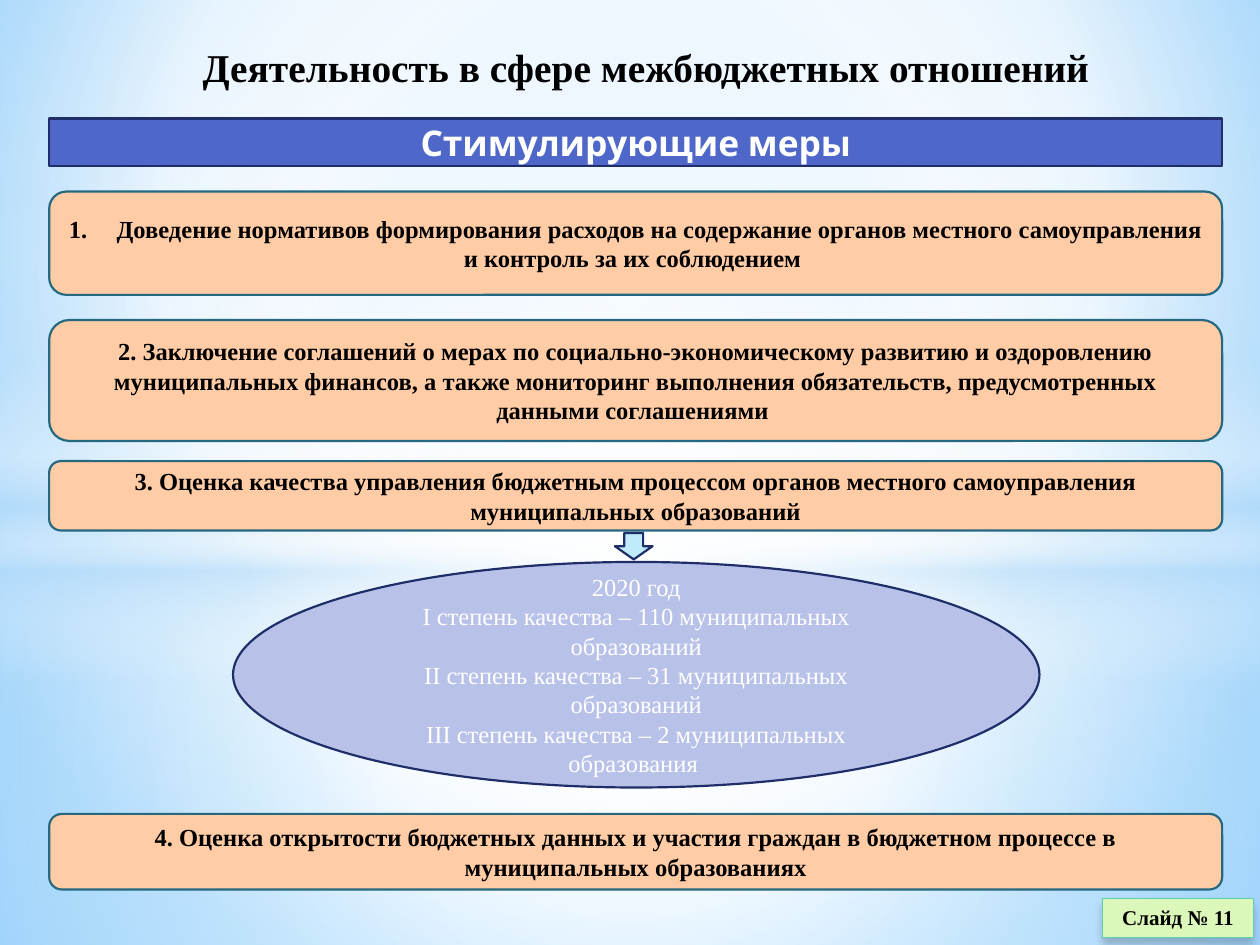
from lxml.etree import SubElement
from pptx import Presentation
from pptx.dml.color import RGBColor
from pptx.enum.shapes import MSO_SHAPE as Kind
from pptx.enum.text import MSO_ANCHOR, PP_ALIGN
from pptx.oxml import parse_xml
from pptx.oxml.ns import qn, nsdecls
from pptx.util import Inches, Pt

deck = Presentation()
deck.slide_width, deck.slide_height = Inches(10), Inches(7.5)
slide = deck.slides.add_slide(deck.slide_layouts[6])


def blend(host, stops, tail):
    marks = "".join(
        f'<a:gs pos="{pos * 1000}"><a:srgbClr val="{tone}">'
        f'<a:alpha val="{alpha * 1000}"/></a:srgbClr></a:gs>'
        for pos, tone, alpha in stops)
    fill = parse_xml(f'<a:gradFill {nsdecls("a")} rotWithShape="1">'
                     f'<a:gsLst>{marks}</a:gsLst>{tail}</a:gradFill>')
    old = host.find(qn("a:solidFill"))
    host.replace(old, fill)


def write(shape, lines, size, tone="000000", bold=True, font="Times New Roman"):
    frame = shape.text_frame
    frame.word_wrap = True
    for i, line in enumerate(lines):
        para = frame.paragraphs[0] if i == 0 else frame.add_paragraph()
        para.alignment = PP_ALIGN.CENTER
        run = para.add_run()
        run.text = line
        run.font.name = font
        run.font.size = Pt(size)
        run.font.bold = bold
        run.font.color.rgb = RGBColor.from_string(tone)


ring = ('<a:path path="circle"><a:fillToRect l="{}000" t="{}000" '
        'r="{}000" b="{}000"/></a:path>')
mid = ring.format(50, 50, 50, 50)
white, sky = "FFFFFF", "B4DCFA"

slide.background.fill.solid()
blend(next(slide.element.iter(qn("p:bgPr"))),
      [(0, "9ED5FF", 100), (60, white, 100), (100, "5BB9FF", 100)],
      ring.format(20, 10, 20, 60))

glows = [
    (Kind.RECTANGLE, 4.23, 3.27, [(0, white, 91), (37, white, 76), (100, sky, 79)], mid),
    (Kind.RECTANGLE, 0, 4.23, [(0, white, 89), (48, white, 62), (100, sky, 79)], mid),
    (Kind.RECTANGLE, 2.9, 2.5,
     [(0, white, 1), (29, white, 30), (45, sky, 40), (55, white, 26),
      (65, sky, 60), (100, white, 1)], '<a:lin ang="5400000" scaled="0"/>'),
    (Kind.OVAL, 1.75, 5.58, [(0, white, 100), (54, white, 1)], mid),
]
for kind, top, high, stops, tail in glows:
    glow = slide.shapes.add_shape(kind, 0, Inches(top), Inches(10), Inches(high))
    glow.shadow.inherit = False
    glow.line.fill.background()
    glow.fill.solid()
    blend(glow.element.spPr, stops, tail)

title = slide.shapes.add_textbox(Inches(0.61), Inches(0.29), Inches(8.84), Inches(0.58))
write(title, ["Деятельность в сфере межбюджетных отношений"], 22.5)
title.text_frame.paragraphs[0]._p.get_or_add_pPr().set("marL", str(Inches(0.2)))

peach, teal, navy = "FFCCA6", "256880", "1F2E69"
items = [
    ("head", Kind.RECTANGLE, (0.39, 0.94, 9.31, 0.38), "4E67C8", navy,
     ["Стимулирующие меры"], (20.2, white, True, "Karla")),
    ("first", Kind.ROUNDED_RECTANGLE, (0.39, 1.52, 9.31, 0.82), peach, teal,
     ["Доведение нормативов формирования расходов на содержание органов местного самоуправления ",
      "и контроль за их соблюдением "], (14,)),
    ("third", Kind.ROUNDED_RECTANGLE, (0.39, 3.66, 9.31, 0.55), peach, teal,
     ["3. Оценка качества управления бюджетным процессом органов местного самоуправления "
      "муниципальных образований"], (14,)),
    ("fourth", Kind.ROUNDED_RECTANGLE, (0.39, 6.46, 9.31, 0.6), peach, teal,
     ["4. Оценка открытости бюджетных данных и участия граждан в бюджетном процессе в "
      "муниципальных образованиях"], (14,)),
    ("second", Kind.ROUNDED_RECTANGLE, (0.39, 2.54, 9.31, 0.96), peach, teal,
     ["2. Заключение соглашений о мерах по социально-экономическому развитию и оздоровлению "
      "муниципальных финансов, а также мониторинг выполнения обязательств, предусмотренных "
      "данными соглашениями "], (14,)),
    ("grades", Kind.OVAL, (1.85, 4.46, 6.4, 1.79), "B8C2E9", navy,
     ["2020 год", "I степень качества – 110 муниципальных образований",
      "II степень качества – 31 муниципальных образований",
      "III степень качества – 2 муниципальных образования "], (14, white, False)),
    ("arrow", Kind.DOWN_ARROW, (4.88, 4.23, 0.3, 0.21), "BFEBFA", navy, [], (14,)),
    ("number", Kind.RECTANGLE, (8.75, 7.13, 1.2, 0.31), "DCF7BA", "5DCEAF",
     ["Слайд № 11"], (12,)),
]
parts = {}
for name, kind, box, fill, edge, lines, style in items:
    shape = slide.shapes.add_shape(kind, *map(Inches, box))
    shape.shadow.inherit = False
    shape.fill.solid()
    shape.fill.fore_color.rgb = RGBColor.from_string(fill)
    shape.line.color.rgb = RGBColor.from_string(edge)
    shape.line.width = Pt(1.25)
    shape.text_frame.vertical_anchor = MSO_ANCHOR.MIDDLE
    write(shape, lines, *style)
    parts[name] = shape

props = parts["first"].text_frame.paragraphs[0]._p.get_or_add_pPr()
props.set("marL", str(Inches(0.38)))
props.set("indent", str(-Inches(0.38)))
SubElement(props, qn("a:buAutoNum"), type="arabicPeriod")

badge = parts["number"]
badge.line.width = Pt(0.75)
badge.text_frame.vertical_anchor = MSO_ANCHOR.TOP
cast = SubElement(badge.element.spPr.find(qn("a:effectLst")), qn("a:outerShdw"),
                  blurRad=str(Pt(5)), dist=str(Pt(4)), dir="5400000", rotWithShape="0")
shade = SubElement(cast, qn("a:srgbClr"), val="000000")
SubElement(shade, qn("a:alpha"), val="20000")

deck.save("out.pptx")
